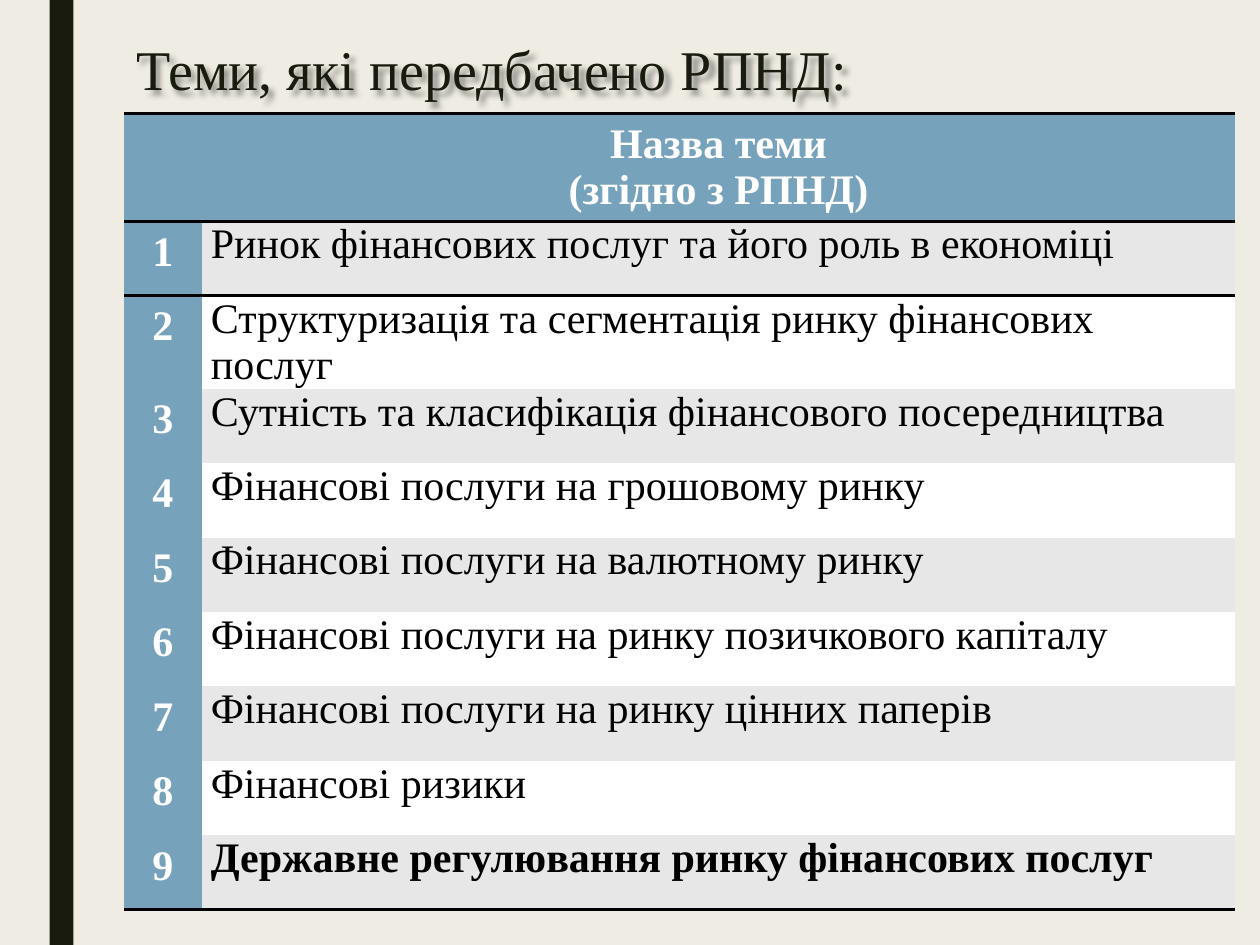
from lxml.etree import SubElement
from pptx import Presentation
from pptx.dml.color import RGBColor
from pptx.enum.shapes import MSO_SHAPE as Shape
from pptx.enum.text import MSO_ANCHOR as Anchor, PP_ALIGN as Align
from pptx.oxml import parse_xml
from pptx.oxml.ns import nsdecls, qn
from pptx.util import Cm, Pt

COLORS = {
    "background": "EFEDE3", "dark": "191B0E", "header": "77A2BB",
    "odd": "E7E7E7", "even": "FFFFFF", "light": "FFFFFF", "text": "000000",
}
NO_GRID_STYLE = "{2D5ABB26-0587-4C30-8999-92F81FD0307C}"
HEADING = "Назва теми\n(згідно з РПНД)"
TOPICS = [
    "Ринок фінансових послуг та його роль в економіці",
    "Структуризація та сегментація ринку фінансових послуг",
    "Сутність та класифікація фінансового посередництва",
    "Фінансові послуги на грошовому ринку",
    "Фінансові послуги на валютному ринку",
    "Фінансові послуги на ринку позичкового капіталу",
    "Фінансові послуги на ринку цінних паперів",
    "Фінансові ризики",
    "Державне регулювання ринку фінансових послуг",
]
LABEL = {"margin_left": Cm(0.15), "margin_right": Cm(0.15),
         "margin_top": Cm(0.15), "margin_bottom": Cm(0.15)}
TOPIC = {"margin_left": Cm(0.18), "margin_right": Cm(0.18),
         "margin_top": 0, "margin_bottom": 0}


def paint(fill, color):
    fill.solid()
    fill.fore_color.rgb = RGBColor.from_string(COLORS[color])


def set_attributes(target, values):
    for name, value in values.items():
        setattr(target, name, value)


def style_text(paragraphs, size, color, bold=False, **layout):
    for paragraph in paragraphs:
        set_attributes(paragraph, layout)
        set_attributes(paragraph.font, {"name": "Times New Roman", "size": Pt(size), "bold": bold})
        paragraph.font.color.rgb = RGBColor.from_string(COLORS[color])


def add_side_bar(slide, left, top, width, height):
    bar = slide.shapes.add_shape(Shape.RECTANGLE, left, top, width, height)
    bar.shadow.inherit = False
    paint(bar.fill, "dark")
    bar.line.fill.background()


def place_title(slide, left, top, width, height):
    title = slide.shapes.title
    set_attributes(title, {"left": left, "top": top, "width": width, "height": height})
    frame = title.text_frame
    frame.text = "Теми, які передбачено РПНД:"
    frame.vertical_anchor = Anchor.TOP
    style_text(frame.paragraphs, 32, "dark", alignment=Align.LEFT, line_spacing=0.89)
    title._element.spPr.append(parse_xml(
        f'<a:effectLst {nsdecls("a")}><a:outerShdw blurRad="38100" dist="38100" dir="2700000">'
        '<a:srgbClr val="000000"><a:alpha val="43000"/></a:srgbClr>'
        '</a:outerShdw></a:effectLst>'))


def add_rules(cell, *sides):
    properties = cell._tc.get_or_add_tcPr()
    for position, side in enumerate(sides):
        rule = parse_xml(f'<a:ln{side} {nsdecls("a")} w="25400"/>')
        fill = SubElement(rule, qn("a:solidFill"))
        SubElement(fill, qn("a:srgbClr"), val=COLORS["text"])
        properties.insert(position, rule)


def fill_cell(cell, text, fill, margins, color, bold, align):
    cell.text = text
    cell.vertical_anchor = Anchor.TOP
    set_attributes(cell, margins)
    paint(cell.fill, fill)
    style_text(cell.text_frame.paragraphs, 24, color, bold, alignment=align)


def add_topics_table(slide, left, top, width, row_height):
    row_count = len(TOPICS) + 1
    table = slide.shapes.add_table(
        row_count, 2, left, top, width, row_height * row_count).table
    set_attributes(table, {"first_row": False, "horz_banding": False})
    table._tbl.tblPr.find(qn("a:tableStyleId")).text = NO_GRID_STYLE
    table.columns[0].width = Cm(1.57)
    table.columns[1].width = width - Cm(1.57)
    for column, text in enumerate(["", HEADING]):
        fill_cell(table.cell(0, column), text, "header", LABEL, "light", True, Align.CENTER)
        add_rules(table.cell(0, column), "T", "B")
        add_rules(table.cell(1, column), "T")
        add_rules(table.cell(len(TOPICS), column), "B")
    for number, topic in enumerate(TOPICS, 1):
        band = "odd" if number % 2 else "even"
        is_current = number == len(TOPICS)
        fill_cell(table.cell(number, 0), str(number), "header", LABEL, "light", True, Align.CENTER)
        fill_cell(table.cell(number, 1), topic, band, TOPIC, "text", is_current, Align.LEFT)


def main():
    deck = Presentation()
    deck.slide_width, deck.slide_height = Cm(25.4), Cm(19.05)
    slide = deck.slides.add_slide(deck.slide_layouts[5])
    paint(slide.background.fill, "background")
    add_side_bar(slide, Cm(1), 0, Cm(0.48), deck.slide_height)
    place_title(slide, Cm(2.5), Cm(0.74), Cm(21.03), Cm(1.8))
    add_topics_table(slide, Cm(2.5), Cm(2.29), Cm(22.4), Cm(1.5))
    deck.save("out.pptx")


if __name__ == "__main__":
    main()
